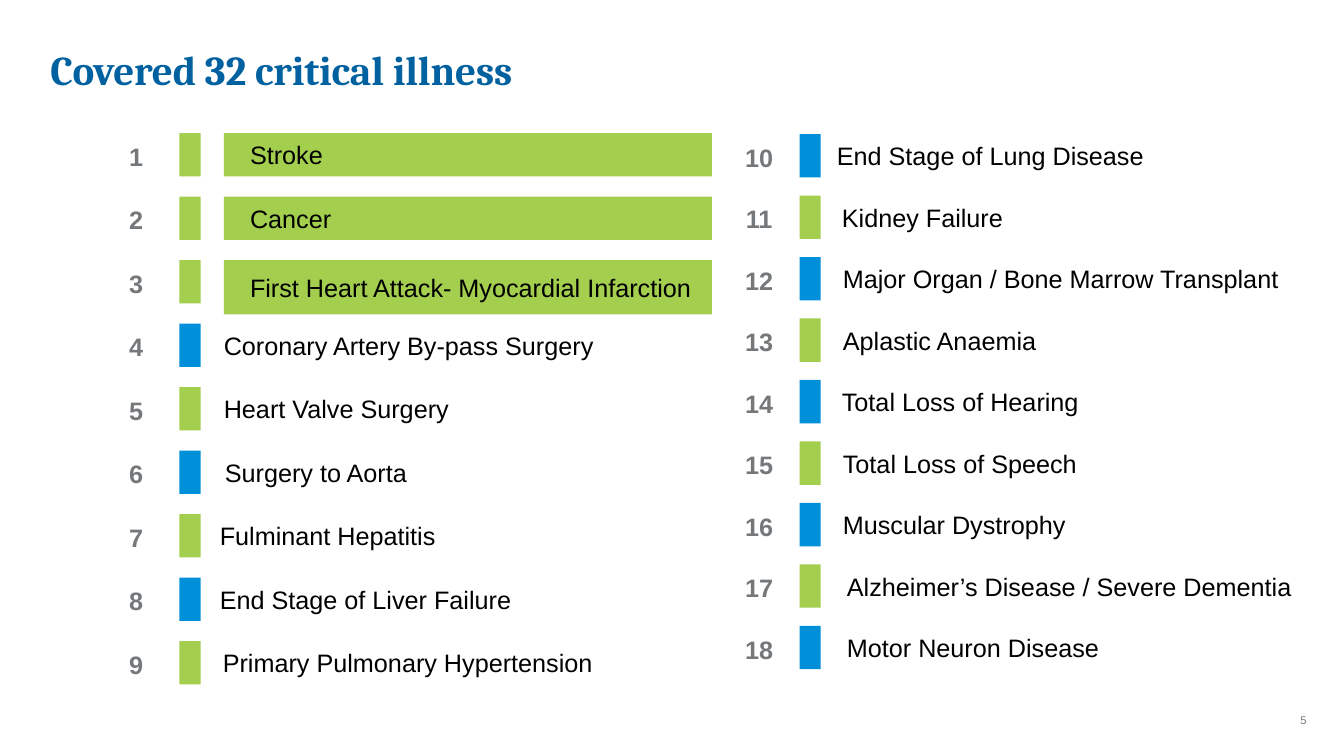
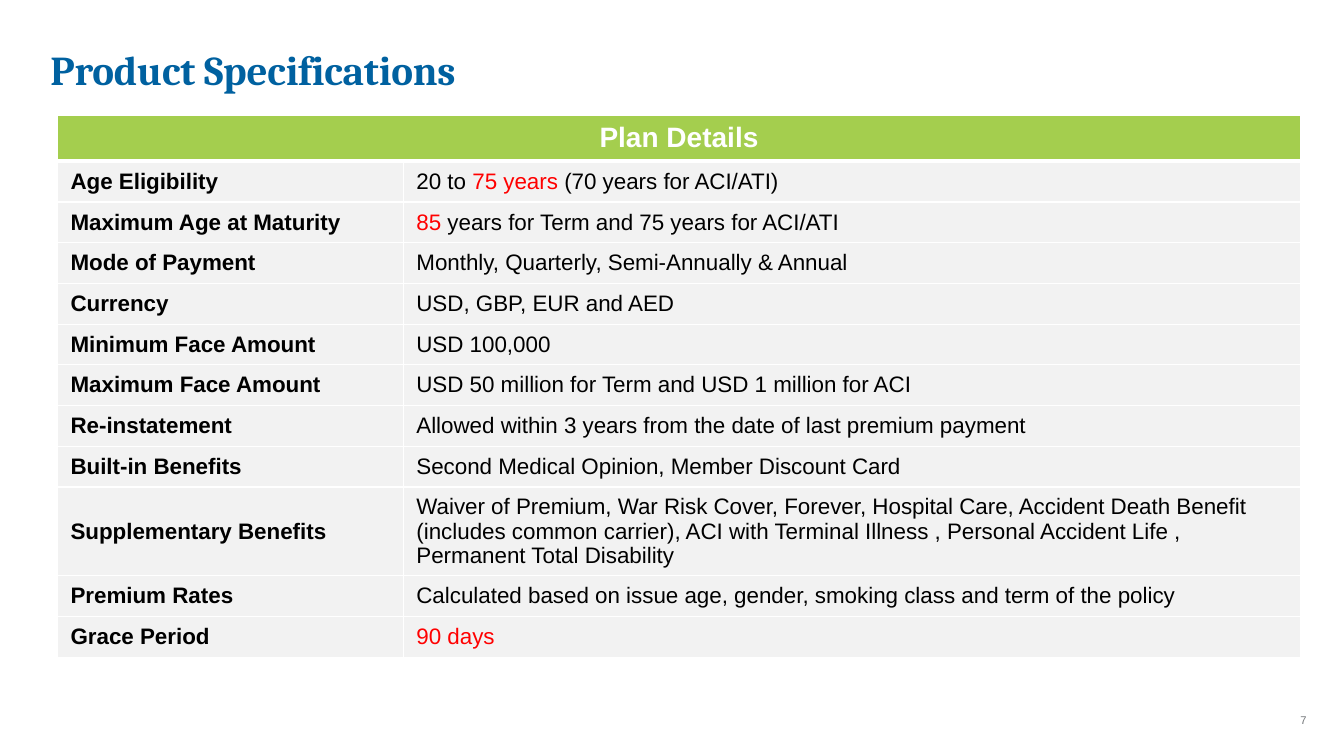
from lxml import etree
from pptx import Presentation
from pptx.dml.color import RGBColor
from pptx.enum.shapes import MSO_SHAPE
from pptx.enum.text import MSO_ANCHOR, MSO_AUTO_SIZE, PP_ALIGN
from pptx.oxml.ns import qn
from pptx.util import Inches, Pt

RECTANGLE = MSO_SHAPE.RECTANGLE
TOP, MIDDLE = MSO_ANCHOR.TOP, MSO_ANCHOR.MIDDLE
LEFT, CENTER = PP_ALIGN.LEFT, PP_ALIGN.CENTER
NO_AUTOFIT = MSO_AUTO_SIZE.NONE
TITLE_ONLY = 5

COLORS = {
    "title": "0061A0",
    "gray": "75787B",
    "green": "A4CE4E",
    "blue": "0090DA",
    "row": "F2F2F2",
    "red": "FF0000",
    "black": "000000",
    "white": "FFFFFF",
}

# Each illness has its text box's left edge
LEFT_ILLNESSES = [
    ("Stroke", 2.22),
    ("Cancer", 2.22),
    ("First Heart Attack- Myocardial Infarction", 2.22),
    ("Coronary Artery By-pass Surgery", 1.96),
    ("Heart Valve Surgery", 1.96),
    ("Surgery to Aorta", 1.97),
    ("Fulminant Hepatitis", 1.92),
    ("End Stage of Liver Failure", 1.92),
    ("Primary Pulmonary Hypertension", 1.95),
]
RIGHT_ILLNESSES = [
    ("End Stage of Lung Disease", 8.04),
    ("Kidney Failure", 8.09),
    ("Major Organ / Bone Marrow Transplant", 8.1),
    ("Aplastic Anaemia", 8.1),
    ("Total Loss of Hearing", 8.09),
    ("Total Loss of Speech", 8.1),
    ("Muscular Dystrophy", 8.1),
    ("Alzheimer’s Disease / Severe Dementia", 8.14),
    ("Motor Neuron Disease", 8.14),
]
HIGHLIGHT_HEIGHTS = {1: 0.43, 2: 0.43, 3: 0.54}

# Each value is a list of (text, color) runs
PLAN_DETAILS = [
    ("Age Eligibility", [("20 to ", "black"), ("75 years ", "red"),
                         ("(70 years for ACI/ATI)", "black")]),
    ("Maximum Age at Maturity", [("85 ", "red"),
                                 ("years for Term and 75 years for ACI/ATI", "black")]),
    ("Mode of Payment", [("Monthly, Quarterly, Semi-Annually & Annual", "black")]),
    ("Currency", [("USD, GBP, EUR and AED", "black")]),
    ("Minimum Face Amount", [("USD 100,000", "black")]),
    ("Maximum Face Amount", [("USD 50 million for Term and USD 1 million for ACI", "black")]),
    ("Re-instatement", [("Allowed within 3 years from the date of last premium payment",
                         "black")]),
    ("Built-in Benefits", [("Second Medical Opinion, Member Discount Card", "black")]),
    ("Supplementary Benefits", [
        ("Waiver of Premium, War Risk Cover, Forever, Hospital Care, Accident Death Benefit "
         "(includes common carrier), ACI with Terminal Illness , Personal Accident Life , "
         "Permanent Total Disability", "black")]),
    ("Premium Rates", [("Calculated based on issue age, gender, smoking class and term of "
                        "the policy", "black")]),
    ("Grace Period", [("90 days", "red")]),
]


def rgb(name):
    return RGBColor.from_string(COLORS[name])


class Deck:
    """Holds the shared style and the current slide."""

    def __init__(self):
        self.presentation = Presentation()
        self.presentation.slide_width = Inches(13.33)
        self.presentation.slide_height = Inches(7.5)
        self.slide = None

    def add_slide(self, title, number):
        layout = self.presentation.slide_layouts[TITLE_ONLY]
        self.slide = self.presentation.slides.add_slide(layout)
        shape = self.slide.shapes.title
        shape.left, shape.top = Inches(0.5), Inches(0.5)
        shape.width, shape.height = Inches(10.34), Inches(0.8)
        self.set_text(shape.text_frame, title, 29.3, "title", True, LEFT, TOP, "Cambria")
        paragraph = shape.text_frame.paragraphs[0]
        paragraph.line_spacing = 0.9
        paragraph.runs[0].font._element.set("spc", "-10")
        self.label(number, 12.53, 7.02, 0.8, 0.25, 8, "gray", align=CENTER)

    def format_run(self, run, size, color, bold=False, font_name="Arial"):
        font = run.font
        font.name, font.size, font.bold = font_name, Pt(size), bold
        font.color.rgb = rgb(color)

    def set_text(self, text_frame, text, size, color, bold=False, align=LEFT,
                 anchor=MIDDLE, font_name="Arial", indent=0):
        text_frame.text = text
        text_frame.word_wrap = True
        text_frame.auto_size = NO_AUTOFIT
        text_frame.vertical_anchor = anchor
        text_frame.margin_left = Inches(indent)
        text_frame.margin_top = text_frame.margin_right = text_frame.margin_bottom = 0
        paragraph = text_frame.paragraphs[0]
        paragraph.alignment = align
        self.format_run(paragraph.runs[0], size, color, bold, font_name)

    def label(self, text, left, top, width, height, size, color, **style):
        box = self.slide.shapes.add_textbox(
            Inches(left), Inches(top), Inches(width), Inches(height))
        self.set_text(box.text_frame, text, size, color, **style)

    def bar(self, left, top, width, height, color):
        shape = self.slide.shapes.add_shape(
            RECTANGLE, Inches(left), Inches(top), Inches(width), Inches(height))
        shape.shadow.inherit = False
        shape.fill.solid()
        shape.fill.fore_color.rgb = rgb(color)
        shape.line.fill.background()
        return shape

    def illness_column(self, illnesses, first, number_left, marker_left, top, step):
        for index, (illness, left) in enumerate(illnesses):
            number, row_top = first + index, top + index * step
            highlight = HIGHLIGHT_HEIGHTS.get(number)
            color = "green" if highlight or number % 2 else "blue"
            self.bar(marker_left, row_top, 0.21, 0.43, color)
            self.label(str(number), number_left, row_top + 0.01, 0.94, 0.44, 18, "gray",
                       bold=True, align=CENTER)
            if highlight:
                shape = self.bar(left, row_top, 4.84, highlight, "green")
                self.set_text(shape.text_frame, illness, 18, "black", indent=0.26)
            else:
                self.label(illness, left, row_top, 4.72, 0.43, 18, "black", indent=0.26)

    def cell(self, cell, runs, size, fill, bold=False, align=LEFT, bottom_width=1):
        cell.fill.solid()
        cell.fill.fore_color.rgb = rgb(fill)
        cell.vertical_anchor = MIDDLE
        cell.margin_left = cell.margin_right = Inches(0.13)
        cell.margin_top = cell.margin_bottom = Inches(0.06)
        paragraph = cell.text_frame.paragraphs[0]
        paragraph.alignment = align
        for text, color in runs:
            run = paragraph.add_run()
            run.text = text
            self.format_run(run, size, color, bold)
        # Borders go before the fill in the cell properties
        properties = cell._tc.get_or_add_tcPr()
        widths = {"a:lnL": 1, "a:lnR": 1, "a:lnT": 1, "a:lnB": bottom_width}
        for position, (tag, width) in enumerate(widths.items()):
            line = etree.Element(qn(tag), w=str(Pt(width)))
            fill_element = etree.SubElement(line, qn("a:solidFill"))
            etree.SubElement(fill_element, qn("a:srgbClr"), val=COLORS["white"])
            properties.insert(position, line)

    def details_table(self, heading, details):
        header_height, tall_height, height = 0.46, 0.88, 5.38
        row_height = (height - header_height - tall_height) / (len(details) - 1)
        table = self.slide.shapes.add_table(
            len(details) + 1, 2, Inches(0.57), Inches(1.14),
            Inches(12.33), Inches(height)).table
        table.columns[0].width, table.columns[1].width = Inches(3.43), Inches(8.9)
        table.rows[0].height = Inches(header_height)
        table.cell(0, 0).merge(table.cell(0, 1))
        self.cell(table.cell(0, 0), [(heading, "white")], 20, "green", True, CENTER, 3)
        for index, (name, value) in enumerate(details, 1):
            tall = name == "Supplementary Benefits"
            table.rows[index].height = Inches(tall_height if tall else row_height)
            self.cell(table.cell(index, 0), [(name, "black")], 16, "row", True)
            self.cell(table.cell(index, 1), value, 16, "row")


def main():
    deck = Deck()

    # Covered illnesses
    deck.add_slide("Covered 32 critical illness", "5")
    deck.illness_column(LEFT_ILLNESSES, 1, 0.88, 1.78, 1.32, 0.63)
    deck.illness_column(RIGHT_ILLNESSES, 10, 7.06, 7.93, 1.33, 0.61)

    # Plan details
    deck.add_slide("Product Specifications", "7")
    deck.details_table("Plan Details", PLAN_DETAILS)

    deck.presentation.save("out.pptx")


if __name__ == "__main__":
    main()
